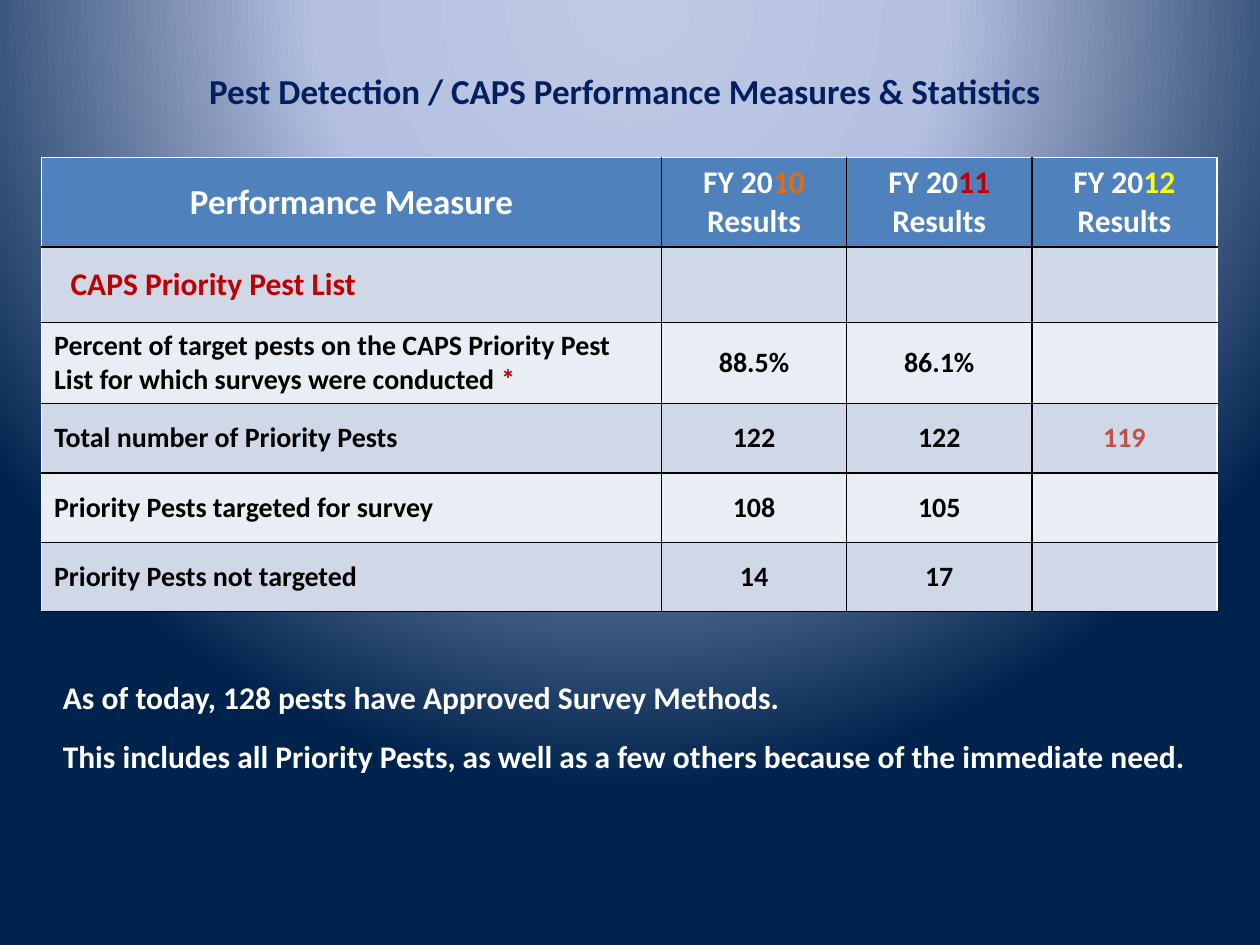
from pptx import Presentation, util as u
from pptx.dml.color import RGBColor
from pptx.enum import text
from pptx.oxml import parse_xml
from pptx.oxml.ns import nsdecls

COLORS = {
    "white": "FFFFFF", "black": "000000", "navy": "002060", "header": "4F81BD",
    "band": "D0D8E8", "light": "E9EDF4", "orange": "E46C0A", "red": "C00000",
    "yellow": "FFFF00", "coral": "C0504D",
}
BACKDROP = [(0, "BFC9E5"), (40, "B5C0E0"), (100, "00234D")]
TITLE = "Pest Detection / CAPS Performance Measures & Statistics"
NOTES = [
    "As of today, 128 pests have Approved Survey Methods.",
    "This includes all Priority Pests, as well as a few others because of the immediate need.",
]
YEARS = [("10", "orange"), ("11", "red"), ("12", "yellow")]
HEADER = [[("Performance Measure", "white")]] + [
    [("FY 20", "white"), (year, color), (" Results", "white")] for year, color in YEARS
]
MEASURES = [
    ([("CAPS Priority Pest List", "red")], "", "", ""),
    ([("Percent of target pests on the CAPS Priority Pest List for which surveys were conducted ",
       "black"), ("*", "red")], "88.5%", "86.1%", ""),
    ([("Total number of Priority Pests", "black")], "122", "122", "119"),
    ([("Priority Pests targeted for survey", "black")], "108", "105", ""),
    ([("Priority Pests not targeted", "black")], "14", "17", ""),
]
VALUE_COLORS = ["black", "black", "coral"]
COLUMN_WIDTHS = [4.92, 1.47, 1.47, 1.47]
ROW_HEIGHTS = [0.7, 0.6, 0.63, 0.55, 0.55, 0.55]


def rgb(name):
    """Return the named colour."""
    return RGBColor.from_string(COLORS[name])


def write(para, spans, size, align=text.PP_ALIGN.LEFT):
    """Fill a paragraph with coloured spans in bold Calibri."""
    para.alignment = align
    para.font.name, para.font.size, para.font.bold = "Calibri", u.Pt(size), True
    for words, color in spans:
        span = para.add_run()
        span.text = words
        span.font.color.rgb = rgb(color)


def paint_background(page):
    """Give the page a radial gradient centred above its top edge."""
    stops = "".join(f'<a:gs pos="{at * 1000}"><a:srgbClr val="{color}"/></a:gs>'
                    for at, color in BACKDROP)
    page.element.cSld.insert(0, parse_xml(
        f'<p:bg {nsdecls("p", "a")}><p:bgPr><a:gradFill rotWithShape="1"><a:gsLst>{stops}</a:gsLst>'
        '<a:path path="circle"><a:fillToRect l="50000" t="-80000" r="50000" b="180000"/></a:path>'
        '</a:gradFill><a:effectLst/></p:bgPr></p:bg>'))


def add_title(page):
    """Place the title and give its letters a soft shadow."""
    box = page.shapes.title
    box.left, box.top, box.width, box.height = map(u.Inches, (1.56, 0.5, 6.86, 0.44))
    frame = box.text_frame
    frame.word_wrap = False
    para = frame.paragraphs[0]
    write(para, [(TITLE, "navy")], 20)
    para.runs[0].font.fill._xPr.append(parse_xml(
        f'<a:effectLst {nsdecls("a")}><a:outerShdw blurRad="38100" dist="38100" dir="2700000">'
        '<a:srgbClr val="000000"><a:alpha val="43000"/></a:srgbClr></a:outerShdw></a:effectLst>'))


def set_borders(cell, row, column):
    """Draw black cell borders with a white outer edge at left, top and right."""
    sides = {"L": column == 0, "R": column == len(COLUMN_WIDTHS) - 1, "T": row == 0, "B": False}
    for index, (side, outer) in enumerate(sides.items()):
        color = COLORS["white" if outer else "black"]
        cell._tc.get_or_add_tcPr().insert(index, parse_xml(
            f'<a:ln{side} {nsdecls("a")} w="12700"><a:solidFill><a:srgbClr val="{color}"/>'
            f'</a:solidFill></a:ln{side}>'))


def add_measures(page):
    """Build the table of performance measures."""
    rows = [HEADER] + [
        [label] + [[(value, color)] if value else [] for value, color in zip(values, VALUE_COLORS)]
        for label, *values in MEASURES
    ]
    table = page.shapes.add_table(
        len(rows), len(COLUMN_WIDTHS), u.Inches(0.33), u.Inches(1.25),
        u.Inches(sum(COLUMN_WIDTHS)), u.Inches(sum(ROW_HEIGHTS))).table
    for column, width in zip(table.columns, COLUMN_WIDTHS):
        column.width = u.Inches(width)
    for r, spans_by_column in enumerate(rows):
        table.rows[r].height = u.Inches(ROW_HEIGHTS[r])
        for c, spans in enumerate(spans_by_column):
            cell = table.cell(r, c)
            cell.vertical_anchor = text.MSO_ANCHOR.MIDDLE
            cell.fill.solid()
            cell.fill.fore_color.rgb = rgb("header" if r == 0 else "band" if r % 2 else "light")
            set_borders(cell, r, c)
            size = 20 if r == c == 0 else 18 if r < 2 else 16
            centred = r == 0 or c > 0
            write(cell.text_frame.paragraphs[0], spans, size,
                  text.PP_ALIGN.CENTER if centred else text.PP_ALIGN.LEFT)
            if r > 1 and c > 0:
                cell.margin_left = cell.margin_right = cell.margin_top = cell.margin_bottom = 0
    section = table.cell(1, 0).text_frame.paragraphs[0]
    section._p.get_or_add_pPr().set("marL", str(u.Inches(0.13)))


def add_notes(page):
    """Add the closing remarks below the table."""
    frame = page.shapes.add_textbox(*map(u.Inches, (0.4, 5.33, 9.18, 0.88))).text_frame
    frame.word_wrap = False
    for index, note in enumerate(NOTES):
        para = frame.add_paragraph() if index else frame.paragraphs[0]
        write(para, [(note, "white")], 18)
        para.space_before = u.Pt(12 if index else 0)


def main():
    """Build and save the slide."""
    deck = Presentation()
    deck.slide_width, deck.slide_height = u.Inches(10), u.Inches(7.5)
    page = deck.slides.add_slide(deck.slide_layouts[5])
    paint_background(page)
    add_title(page)
    add_measures(page)
    add_notes(page)
    deck.save("out.pptx")


if __name__ == "__main__":
    main()
